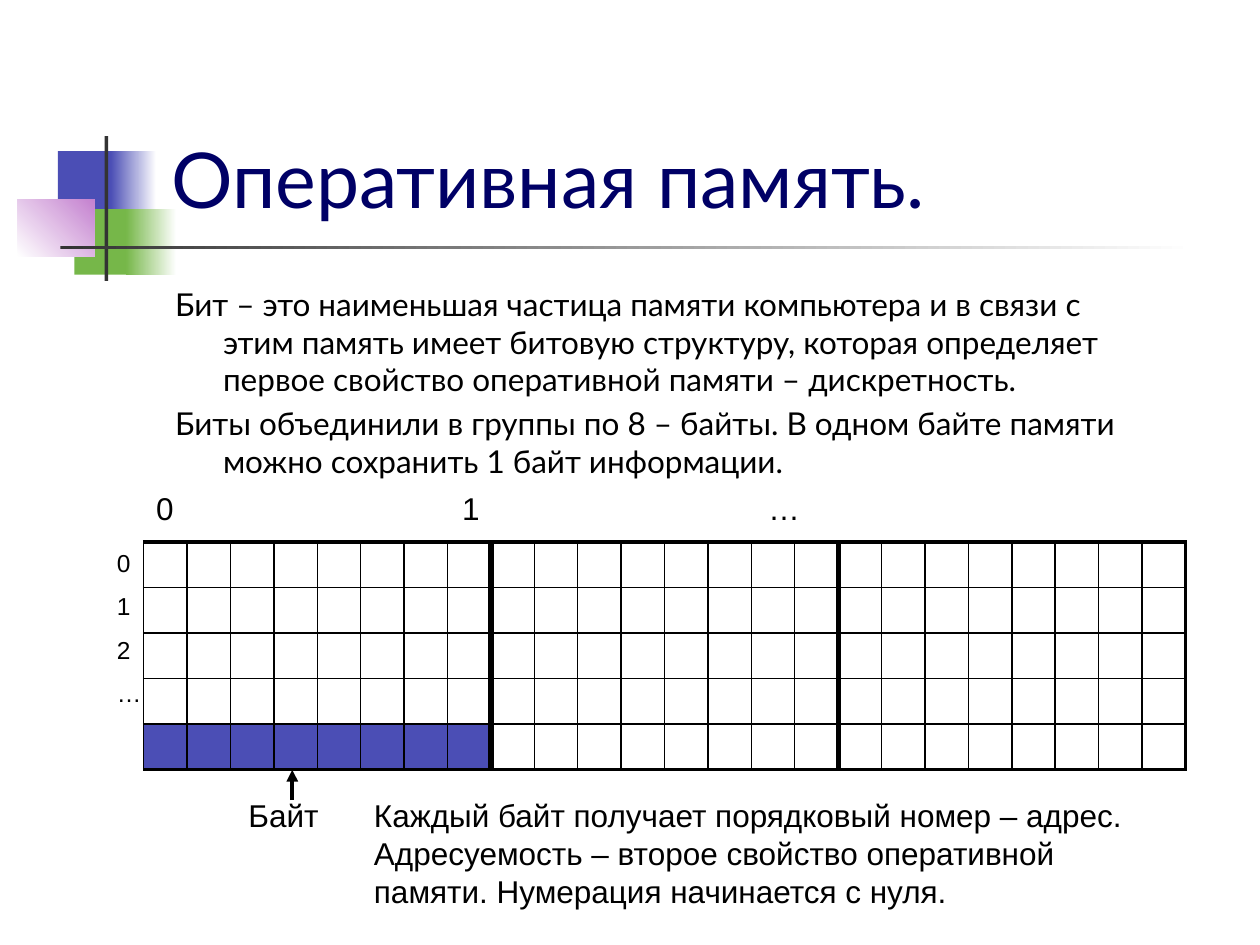
from lxml.etree import SubElement
from pptx import Presentation
from pptx.dml.color import RGBColor
from pptx.enum.shapes import MSO_CONNECTOR, MSO_SHAPE
from pptx.enum.text import MSO_ANCHOR, MSO_AUTO_SIZE, PP_ALIGN
from pptx.oxml import parse_xml
from pptx.oxml.ns import nsdecls, qn
from pptx.util import Inches, Pt

# Content
TITLE = "Оперативная память."
BODY = [
    "Бит – это наименьшая частица памяти компьютера и в связи с этим память "
    "имеет битовую структуру, которая определяет первое свойство оперативной "
    "памяти – дискретность.",
    "Биты объединили в группы по 8 – байты. В одном байте памяти можно "
    "сохранить 1 байт информации.",
]
BYTE_NUMBERS = ["0", "1", "…"]
ROW_NUMBERS = ["0", "1", "2", "…"]
BYTE_LABEL = "Байт"
ADDRESS_NOTE = (
    "Каждый байт получает порядковый номер – адрес. Адресуемость – второе "
    "свойство оперативной памяти. Нумерация начинается с нуля."
)

THEME = {
    "title_font": "Lato", "label_font": "Arial",
    "title_size": 44, "text_size": 18, "row_size": 14, "cell_size": 10,
    "title": "000066", "text": "000000", "line": "000000",
    "blue": "4B4EB5", "green": "76B749", "violet": "C481CF",
    "dark": "333333", "white": "FFFFFF",
    "thin": 1, "frame": 2.25, "divider": 3,
}

# Ornament: left, top, width, height, fill colours, gradient angle
ORNAMENT = [
    (0.46, 1.2, 0.48, 0.52, ["blue"], 0),
    (0.88, 1.2, 0.36, 0.52, ["blue", "white"], 0),
    (0.59, 1.66, 0.46, 0.52, ["green"], 0),
    (1, 1.66, 0.4, 0.52, ["green", "white"], 0),
    (0.14, 1.58, 0.61, 0.46, ["white", "violet"], 45),
    (0.83, 1.08, 0.03, 1.15, ["dark"], 0),
    (0.48, 1.95, 9, 0.03, ["dark", "white"], 0),
]

# Memory grid
LEFT, TOP, WIDTH, HEIGHT = 1.14, 4.3, 8.27, 1.81
ROWS, BYTES, BITS = 5, 3, 8
COLUMNS = BYTES * BITS
BOTTOM = TOP + HEIGHT
BYTE_WIDTH = WIDTH / BYTES
NUMBER_STEP = 2.43


def color(name):
    return RGBColor.from_string(THEME[name])


def write(frame, paragraphs, font, size, ink="text", align=PP_ALIGN.LEFT, before=0):
    frame.word_wrap = True
    frame.auto_size = MSO_AUTO_SIZE.NONE
    for index, text in enumerate(paragraphs):
        para = frame.paragraphs[0] if index == 0 else frame.add_paragraph()
        para.text = text
        para.alignment = align
        para.space_before = Pt(before)
        para.font.name = THEME[font]
        para.font.size = Pt(THEME[size])
        para.font.color.rgb = color(ink)


def place(shape, left, top, width, height):
    shape.left, shape.top = Inches(left), Inches(top)
    shape.width, shape.height = Inches(width), Inches(height)


def add_label(page, at, paragraphs, size="text_size", **options):
    box = page.shapes.add_textbox(*map(Inches, at))
    write(box.text_frame, paragraphs, "label_font", size, **options)
    return box


def add_line(page, start, end, width):
    line = page.shapes.add_connector(
        MSO_CONNECTOR.STRAIGHT, *map(Inches, (*start, *end)))
    line.line.color.rgb = color("line")
    line.line.width = Pt(THEME[width])
    SubElement(line.element.spPr, qn("a:effectLst"))
    return line


def add_ornament(page, behind):
    for *at, fills, angle in ORNAMENT:
        part = page.shapes.add_shape(MSO_SHAPE.RECTANGLE, *map(Inches, at))
        part.shadow.inherit = False
        part.line.fill.background()
        if len(fills) == 1:
            part.fill.solid()
            part.fill.fore_color.rgb = color(fills[0])
        else:
            part.fill.gradient()
            part.fill.gradient_angle = angle
            for stop, name in zip(part.fill.gradient_stops, fills):
                stop.color.rgb = color(name)
        behind.element.addprevious(part.element)


def set_borders(cell, frame_sides):
    properties = cell._tc.get_or_add_tcPr()
    for index, side in enumerate("LRTB"):
        width = Pt(THEME["frame" if side in frame_sides else "thin"])
        properties.insert(index, parse_xml(
            f'<a:ln{side} {nsdecls("a")} w="{width}"><a:solidFill>'
            f'<a:srgbClr val="{THEME["line"]}"/></a:solidFill></a:ln{side}>'))


def add_grid(page):
    table = page.shapes.add_table(
        ROWS, COLUMNS, *map(Inches, (LEFT, TOP, WIDTH, HEIGHT))).table
    table.first_row = table.horz_banding = False
    for column in table.columns:
        column.width = Inches(WIDTH / COLUMNS)
    for row_index, row in enumerate(table.rows):
        row.height = Inches(HEIGHT / ROWS)
        last_row = row_index == ROWS - 1
        for column_index, cell in enumerate(row.cells):
            cell.margin_top = cell.margin_bottom = 0
            cell.text_frame.paragraphs[0].font.size = Pt(THEME["cell_size"])
            if last_row and column_index < BITS:
                cell.fill.solid()
                cell.fill.fore_color.rgb = color("blue")
            else:
                cell.fill.background()
            set_borders(cell, ("T" if row_index == 0 else "")
                        + ("B" if last_row else "")
                        + ("R" if column_index == COLUMNS - 1 else ""))


def main():
    deck = Presentation()
    deck.slide_width, deck.slide_height = Inches(10), Inches(7.5)
    page = deck.slides.add_slide(deck.slide_layouts[1])

    # Title and definitions
    title, body = page.shapes.title, page.placeholders[1]
    place(title, 1.26, 0.23, 8.52, 1.6)
    write(title.text_frame, [TITLE], "title_font", "title_size", "title")
    title.text_frame.vertical_anchor = MSO_ANCHOR.BOTTOM
    place(body, 1.29, 2.21, 7.8, 2.02)
    write(body.text_frame, BODY, "title_font", "text_size", before=3.6)
    for para in body.text_frame.paragraphs:
        properties = para._p.get_or_add_pPr()
        properties.set("marL", str(Inches(0.38)))
        properties.set("indent", str(-Inches(0.38)))
        SubElement(properties, qn("a:buNone"))
    add_ornament(page, title)

    # Memory grid with byte dividers
    add_grid(page)
    for index in range(1, BYTES):
        x = LEFT + index * BYTE_WIDTH
        add_line(page, (x, TOP), (x, BOTTOM), "divider")

    # Arrow to the marked byte
    arrow = add_line(page, (2.32, 6.35), (2.32, BOTTOM), "frame")
    SubElement(arrow.line._get_or_add_ln(), qn("a:tailEnd"), type="triangle")
    add_label(page, (1.03, 6.27, 2.44, 0.4), [BYTE_LABEL], align=PP_ALIGN.CENTER)

    # Byte numbers on tab stops, row numbers and note
    numbers = add_label(page, (LEFT, 3.83, WIDTH, 0.4), ["\t".join(BYTE_NUMBERS)])
    tabs = SubElement(
        numbers.text_frame.paragraphs[0]._p.get_or_add_pPr(), qn("a:tabLst"))
    for index in range(1, BYTES):
        SubElement(tabs, qn("a:tab"), pos=str(Inches(index * NUMBER_STEP)), algn="l")
    add_label(page, (0.83, TOP, 0.47, 1.38), ROW_NUMBERS, "row_size", before=8)
    add_label(page, (2.87, 6.27, 6.54, 1), [ADDRESS_NOTE])

    deck.save("out.pptx")


if __name__ == "__main__":
    main()
